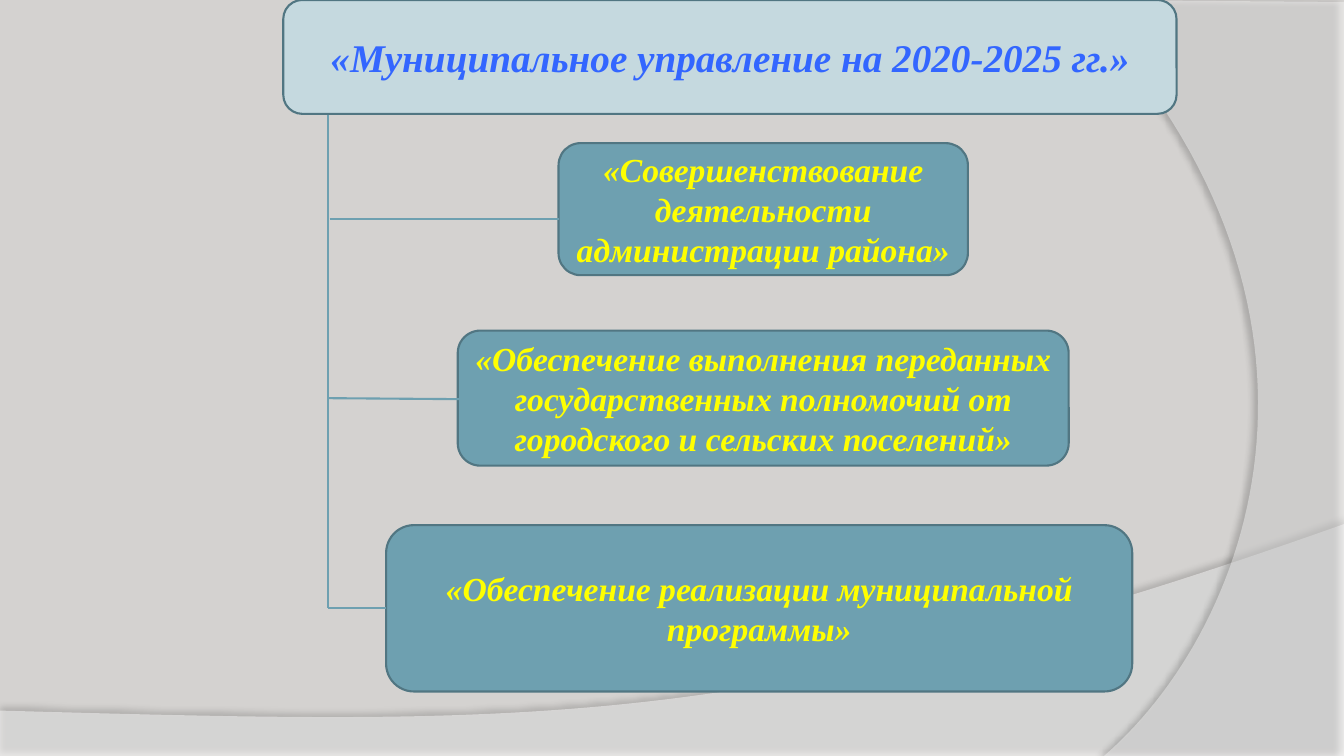
from dataclasses import dataclass

import pptx
import pptx.dml.color
import pptx.enum.shapes
import pptx.enum.text
import pptx.oxml
import pptx.oxml.ns
import pptx.util
from pptx.util import Inches

Point = tuple[float, float]


@dataclass(frozen=True)
class Theme:
    font: str = "Times New Roman"
    background: str = "D4D2D0"
    wave: str = "FFFFFF"
    shadow: str = "000000"
    title_fill: str = "C5D9DF"
    title_text: str = "3366FF"
    title_size: int = 28
    goal_fill: str = "6EA0B0"
    goal_text: str = "FFFF00"
    goal_size: int = 24
    outline: str = "517682"
    branch: str = "6EA0B0"
    line_width: float = 1.5


@dataclass(frozen=True)
class Panel:
    text: str
    left: float
    top: float
    width: float
    height: float
    fill: str
    color: str
    size: int


@dataclass(frozen=True)
class Branch:
    start: Point
    end: Point


@dataclass(frozen=True)
class Wave:
    before: list[Point]
    curve: tuple[Point, Point, Point, Point]
    after: list[Point]
    opacity: int
    shadow_opacity: int
    shadow_distance: float
    shadow_angle: int


THEME = Theme()
WIDTH, HEIGHT = 13.33, 7.5
TRUNK_X, TRUNK_TOP, TRUNK_BOTTOM = 3.25, 1.14, 6.03

WAVES = [
    Wave([(0, 7.05), (0, HEIGHT), (WIDTH, HEIGHT)],
         ((WIDTH, 5.2), (7.45, 7.29), (5.21, 7.19), (0, 7.05)),
         [], 45, 35, 3.5, 270),
    Wave([(WIDTH, 0.02), (WIDTH, HEIGHT)],
         ((10.95, HEIGHT), (12.46, 6.19), (13.57, 3), (10.67, 0)),
         [(WIDTH, 0.02)], 40, 45, 4, 180),
]


def goal(text: str, left: float, top: float, width: float, height: float) -> Panel:
    return Panel(text, left, top, width, height,
                 THEME.goal_fill, THEME.goal_text, THEME.goal_size)


PROGRAMME = Panel("«Муниципальное управление на 2020-2025 гг.»", 2.81, 0, 8.86, 1.13,
                  THEME.title_fill, THEME.title_text, THEME.title_size)
GOALS = [
    goal("«Совершенствование деятельности администрации района»",
         5.54, 1.42, 4.06, 1.31),
    goal("«Обеспечение выполнения переданных государственных полномочий "
         "от городского и сельских поселений»", 4.54, 3.28, 6.06, 1.34),
    goal("«Обеспечение реализации муниципальной программы»",
         3.83, 5.21, 7.4, 1.65),
]
BRANCHES = [
    Branch((TRUNK_X, TRUNK_TOP), (TRUNK_X, TRUNK_BOTTOM)),
    Branch((3.27, 2.17), (5.54, 2.17)),
    Branch((TRUNK_X, 3.95), (4.56, 3.96)),
    Branch((TRUNK_X, TRUNK_BOTTOM), (3.83, TRUNK_BOTTOM)),
]


def rgb(value: str) -> pptx.dml.color.RGBColor:
    return pptx.dml.color.RGBColor.from_string(value)


def bezier(curve: tuple[Point, Point, Point, Point], steps: int = 60) -> list[Point]:
    points = []
    for step in range(steps + 1):
        t = step / steps
        weights = ((1 - t) ** 3, 3 * t * (1 - t) ** 2, 3 * t ** 2 * (1 - t), t ** 3)
        points.append((sum(w * p[0] for w, p in zip(weights, curve)),
                       sum(w * p[1] for w, p in zip(weights, curve))))
    return points


def draw_wave(slide: pptx.slide.Slide, wave: Wave) -> None:
    points = [(Inches(x), Inches(y))
              for x, y in wave.before + bezier(wave.curve) + wave.after]
    builder = slide.shapes.build_freeform(*points[0])
    builder.add_line_segments(points[1:])
    surface = builder.convert_to_shape()
    surface.fill.solid()
    surface.fill.fore_color.rgb = rgb(THEME.wave)
    surface.line.fill.background()
    surface.shadow.inherit = False
    properties = surface.element.spPr
    color = properties.find(".//" + pptx.oxml.ns.qn("a:srgbClr"))
    namespace = pptx.oxml.ns.nsdecls("a")
    color.append(pptx.oxml.parse_xml(
        f'<a:alpha {namespace} val="{wave.opacity * 1000}"/>'))
    properties.find(pptx.oxml.ns.qn("a:effectLst")).append(pptx.oxml.parse_xml(
        f'<a:outerShdw {namespace} blurRad="{pptx.util.Pt(4)}" '
        f'dist="{pptx.util.Pt(wave.shadow_distance)}" '
        f'dir="{wave.shadow_angle * 60000}" algn="ctr" rotWithShape="0">'
        f'<a:srgbClr val="{THEME.shadow}">'
        f'<a:alpha val="{wave.shadow_opacity * 1000}"/>'
        '</a:srgbClr></a:outerShdw>'))


def draw_panel(slide: pptx.slide.Slide, panel: Panel) -> None:
    box = slide.shapes.add_shape(
        pptx.enum.shapes.MSO_SHAPE.ROUNDED_RECTANGLE,
        Inches(panel.left), Inches(panel.top),
        Inches(panel.width), Inches(panel.height))
    box.shadow.inherit = False
    box.fill.solid()
    box.fill.fore_color.rgb = rgb(panel.fill)
    box.line.color.rgb = rgb(THEME.outline)
    box.line.width = pptx.util.Pt(THEME.line_width)
    frame = box.text_frame
    frame.word_wrap = True
    frame.vertical_anchor = pptx.enum.text.MSO_ANCHOR.MIDDLE
    paragraph = frame.paragraphs[0]
    paragraph.text = panel.text
    paragraph.alignment = pptx.enum.text.PP_ALIGN.CENTER
    paragraph.font.name = THEME.font
    paragraph.font.size = pptx.util.Pt(panel.size)
    paragraph.font.bold = True
    paragraph.font.italic = True
    paragraph.font.color.rgb = rgb(panel.color)


def draw_branch(slide: pptx.slide.Slide, branch: Branch) -> None:
    link = slide.shapes.add_connector(
        pptx.enum.shapes.MSO_CONNECTOR.STRAIGHT,
        *(Inches(value) for value in branch.start + branch.end))
    link.line.color.rgb = rgb(THEME.branch)
    link.line.width = pptx.util.Pt(THEME.line_width)
    link.element.spPr.append(pptx.oxml.parse_xml(
        f'<a:effectLst {pptx.oxml.ns.nsdecls("a")}/>'))


def main() -> None:
    deck = pptx.Presentation()
    deck.slide_width, deck.slide_height = Inches(WIDTH), Inches(HEIGHT)
    slide = deck.slides.add_slide(deck.slide_layouts[6])
    slide.background.fill.solid()
    slide.background.fill.fore_color.rgb = rgb(THEME.background)
    for wave in WAVES:
        draw_wave(slide, wave)
    for panel in [PROGRAMME, *GOALS]:
        draw_panel(slide, panel)
    for branch in BRANCHES:
        draw_branch(slide, branch)
    deck.save("out.pptx")


if __name__ == "__main__":
    main()
